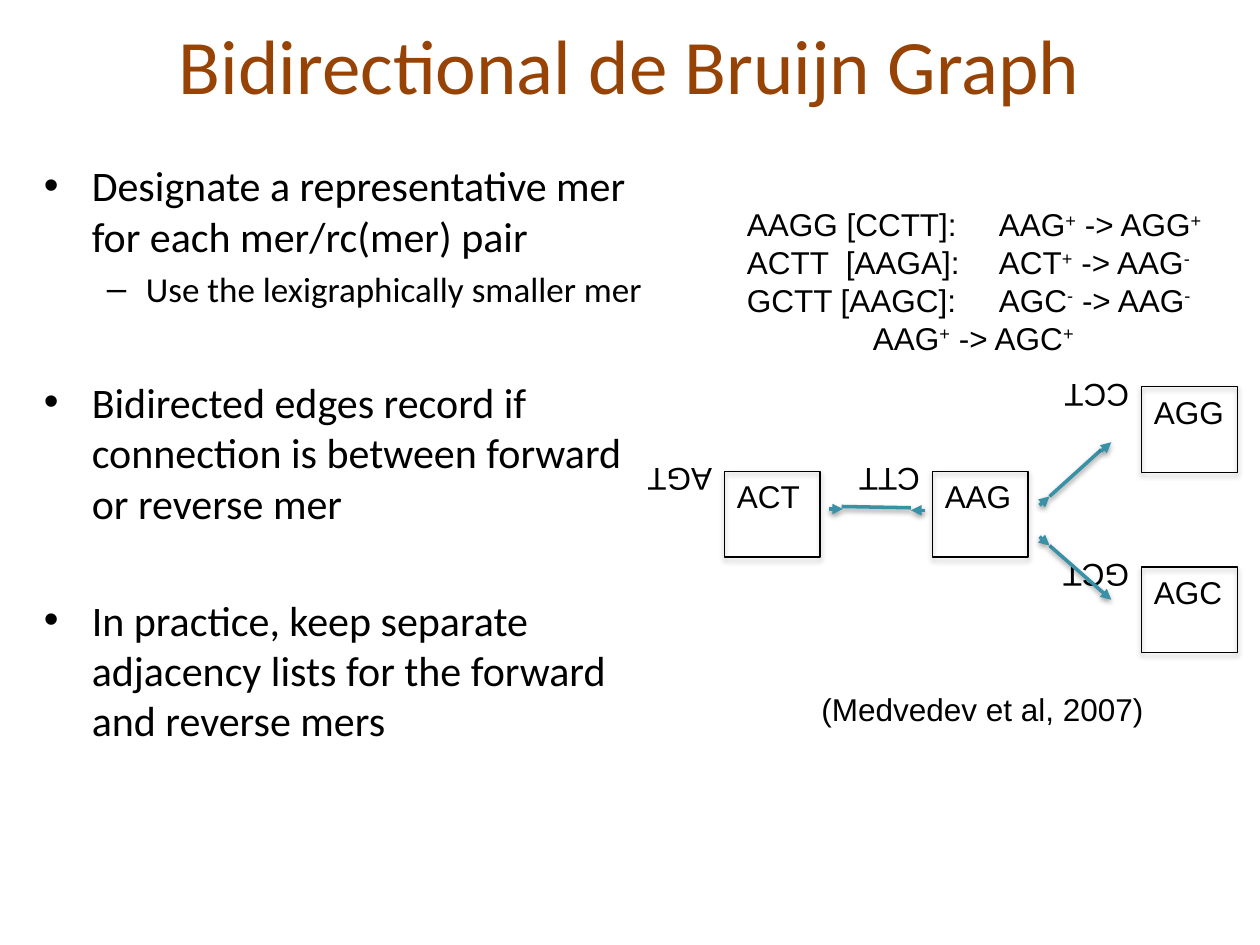
from lxml.etree import SubElement
from pptx import Presentation
from pptx.dml.color import RGBColor
from pptx.enum.shapes import MSO_CONNECTOR, MSO_SHAPE
from pptx.enum.text import MSO_ANCHOR, PP_ALIGN
from pptx.oxml.ns import qn
from pptx.util import Inches, Pt

BROWN = RGBColor(0x96, 0x43, 0x05)
BLACK = RGBColor(0, 0, 0)
TEAL = RGBColor(0x38, 0x91, 0xA7)

NODE_WIDTH, NODE_HEIGHT = 0.76, 0.68
LABEL_HEIGHT = 0.4
REVERSE_OFFSET = 0.28

# Forward mer, reverse complement, left, top, reverse label width
NODES = [
    ("AAG", "CTT", 7.4, 3.74, 0.69),
    ("AGG", "CCT", 9.06, 3.07, 0.72),
    ("ACT", "AGT", 5.75, 3.74, 0.73),
    ("AGC", "GCT", 9.06, 4.5, 0.74),
]

# Each edge: plain middle, then the two end pieces, drawn tail to tip
EDGES = [
    [(7.23, 4.03, 6.68, 4.02), (6.58, 4.04, 6.69, 4.04), (7.34, 4.05, 7.23, 4.05)],
    [(8.33, 3.94, 8.74, 3.57), (8.74, 3.58, 8.82, 3.51), (8.25, 4.01, 8.33, 3.94)],
    [(8.33, 4.33, 8.74, 4.69), (8.74, 4.69, 8.82, 4.76), (8.25, 4.26, 8.33, 4.33)],
]

# Text, level, space before in points
POINTS = [
    ("Designate a representative mer for each mer/rc(mer) pair", 0, 0),
    ("Use the lexigraphically smaller mer", 1, 4),
    ("Bidirected edges record if connection is between forward or reverse mer", 0, 38),
    ("In practice, keep separate adjacency lists for the forward and reverse mers", 0, 38),
]
# Bullet, text indent, hanging indent, size for each level
LEVELS = [("•", 0.38, -0.38, 24), ("–", 0.81, -0.31, 20)]

# Label, then mer and strand at both ends of the edge
MER_EDGES = [
    ("AAGG [CCTT]:\t", "AAG", "+", "AGG", "+"),
    ("ACTT  [AAGA]:\t", "ACT", "+", "AAG", "-"),
    ("GCTT [AAGC]:\t", "AGC", "-", "AAG", "-"),
    ("\t\t", "AAG", "+", "AGC", "+"),
]


def add_run(paragraph, text, size=18, font="Arial", color=BLACK, superscript=False):
    run = paragraph.add_run()
    run.text = text
    run.font.size = Pt(size)
    run.font.name = font
    run.font.color.rgb = color
    if superscript:
        run.font._element.set("baseline", "30000")


def add_frame(slide, left, top, width, height, wrap=False):
    box = slide.shapes.add_textbox(Inches(left), Inches(top), Inches(width), Inches(height))
    box.text_frame.word_wrap = wrap
    return box


def add_text(slide, text, left, top, width, height=LABEL_HEIGHT, wrap=False,
             align=PP_ALIGN.LEFT, anchor=MSO_ANCHOR.TOP, rotation=0, **run_format):
    box = add_frame(slide, left, top, width, height, wrap)
    box.rotation = rotation
    box.text_frame.vertical_anchor = anchor
    paragraph = box.text_frame.paragraphs[0]
    paragraph.alignment = align
    add_run(paragraph, text, **run_format)


def add_shadow(shape, distance, opacity):
    effects = SubElement(shape._element.spPr, qn("a:effectLst"))
    shadow = SubElement(effects, qn("a:outerShdw"), blurRad=str(Pt(3.1)),
                        dist=str(Pt(distance)), dir="5400000", rotWithShape="0")
    color = SubElement(shadow, qn("a:srgbClr"), val=str(BLACK))
    SubElement(color, qn("a:alpha"), val=str(opacity * 1000))


def add_points(slide):
    frame = add_frame(slide, 0.25, 1.22, 5.08, 5.62, wrap=True).text_frame
    for index, (text, level, space) in enumerate(POINTS):
        paragraph = frame.add_paragraph() if index else frame.paragraphs[0]
        bullet, margin, indent, size = LEVELS[level]
        paragraph.level = level
        paragraph.space_before = Pt(space)
        properties = paragraph._p.get_or_add_pPr()
        properties.set("marL", str(Inches(margin)))
        properties.set("indent", str(Inches(indent)))
        SubElement(properties, qn("a:buFont"), typeface="Arial")
        SubElement(properties, qn("a:buChar"), char=bullet)
        add_run(paragraph, text, size=size, font="Calibri")


def add_mer_edges(slide):
    frame = add_frame(slide, 5.83, 1.58, 3.87, 1.31).text_frame
    for index, (label, start, start_strand, end, end_strand) in enumerate(MER_EDGES):
        paragraph = frame.add_paragraph() if index else frame.paragraphs[0]
        add_run(paragraph, label + start)
        add_run(paragraph, start_strand, superscript=True)
        add_run(paragraph, f" -> {end}")
        add_run(paragraph, end_strand, superscript=True)


def add_node(slide, forward, reverse, left, top, reverse_width):
    add_text(slide, forward, left, top, NODE_WIDTH)
    # The reverse mer stands upside down, left of the node
    add_text(slide, reverse, left - reverse_width, top + REVERSE_OFFSET - LABEL_HEIGHT,
             reverse_width, rotation=180)
    node = slide.shapes.add_shape(MSO_SHAPE.RECTANGLE, Inches(left), Inches(top),
                                  Inches(NODE_WIDTH), Inches(NODE_HEIGHT))
    node.fill.background()
    node.line.color.rgb = BLACK
    node.line.width = Pt(0.75)
    add_shadow(node, distance=1.8, opacity=35)


def add_line(slide, ends, arrow):
    line = slide.shapes.add_connector(MSO_CONNECTOR.STRAIGHT, *map(Inches, ends))
    line.line.color.rgb = TEAL
    line.line.width = Pt(2)
    if arrow:
        SubElement(line.line._get_or_add_ln(), qn("a:tailEnd"), type="triangle")
    add_shadow(line, distance=1.6, opacity=38)


def add_edge(slide, pieces):
    for index, ends in enumerate(pieces):
        add_line(slide, ends, arrow=index > 0)


def main():
    presentation = Presentation()
    presentation.slide_width = Inches(10)
    presentation.slide_height = Inches(7.5)
    slide = presentation.slides.add_slide(presentation.slide_layouts[6])

    # Title and explanation
    add_text(slide, "Bidirectional de Bruijn Graph", 0.5, 0.17, 9, 0.67, wrap=True,
             align=PP_ALIGN.CENTER, anchor=MSO_ANCHOR.MIDDLE,
             size=44, font="Calibri", color=BROWN)
    add_points(slide)

    # Example graph
    add_mer_edges(slide)
    for node in NODES:
        add_node(slide, *node)
    for edge in EDGES:
        add_edge(slide, edge)

    # Citation
    add_text(slide, "(Medvedev et al, 2007)", 6.42, 5.43, 2.78)

    presentation.save("out.pptx")


if __name__ == "__main__":
    main()
